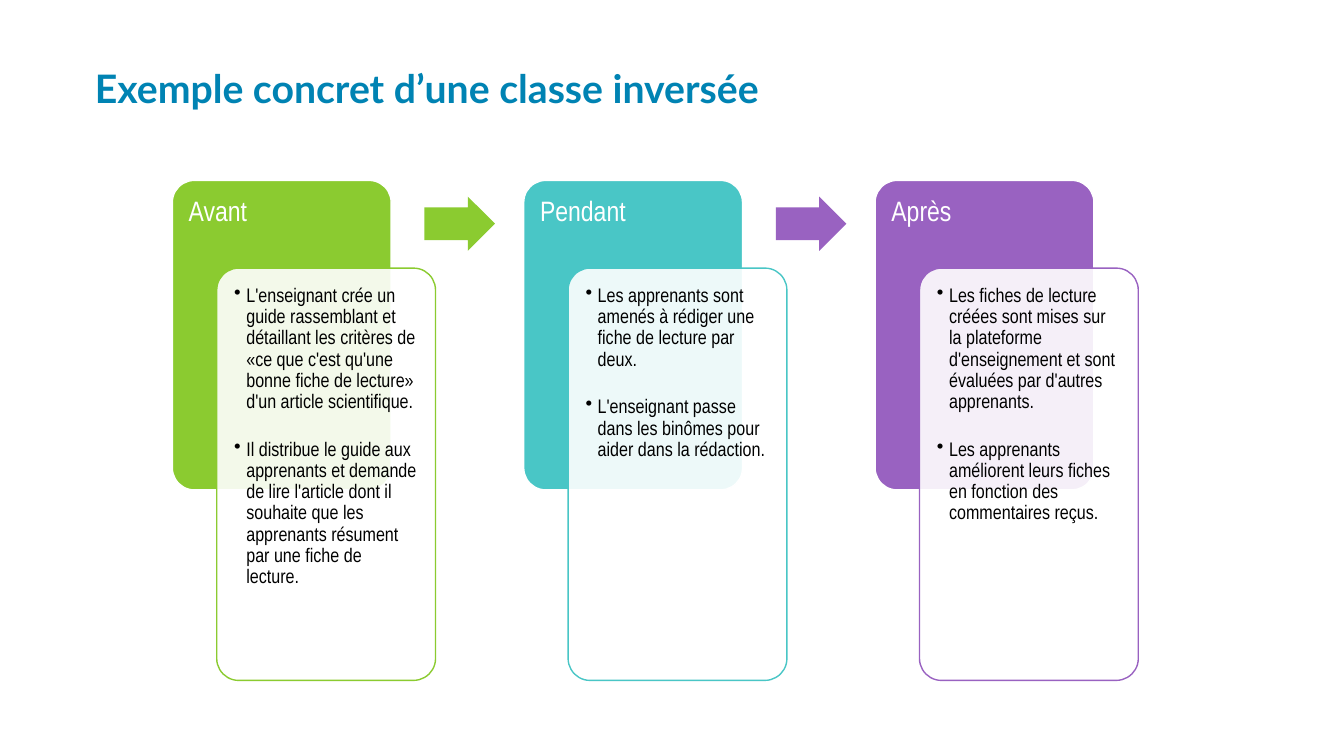
from lxml.etree import SubElement
from pptx import Presentation
from pptx.dml.color import RGBColor
from pptx.enum.shapes import MSO_SHAPE
from pptx.enum.text import MSO_ANCHOR, MSO_AUTO_SIZE, PP_ALIGN
from pptx.oxml.ns import qn
from pptx.util import Inches, Pt

BLUE = RGBColor(0x00, 0x83, 0xB3)
GREEN = RGBColor(0x8B, 0xCB, 0x30)
TEAL = RGBColor(0x49, 0xC6, 0xC6)
PURPLE = RGBColor(0x99, 0x62, 0xC1)
WHITE = RGBColor(0xFF, 0xFF, 0xFF)
BLACK = RGBColor(0x00, 0x00, 0x00)

FIRST_LEFT, TOP = 1.71, 1.79
COLUMN_PITCH = 6.97 / 2
BLOCK_WIDTH = 2.17

PHASES = [
    ("Avant", GREEN, [
        "L'enseignant crée un guide rassemblant et détaillant les critères de "
        "«ce que c'est qu'une bonne fiche de lecture» d'un article scientifique.",
        "Il distribue le guide aux apprenants et demande de lire l'article dont il "
        "souhaite que les apprenants résument par une fiche de lecture."]),
    ("Pendant", TEAL, [
        "Les apprenants sont amenés à rédiger une fiche de lecture par deux.",
        "L'enseignant passe dans les binômes pour aider dans la rédaction."]),
    ("Après", PURPLE, [
        "Les fiches de lecture créées sont mises sur la plateforme d'enseignement "
        "et sont évaluées par d'autres apprenants.",
        "Les apprenants améliorent leurs fiches en fonction des commentaires reçus."]),
]


def set_format(target, values):
    for name, value in values.items():
        setattr(target, name, value)


def write(para, text, size, color, font="Arial Narrow", bold=False, spacing=0.9):
    span = para.add_run()
    span.text = text
    set_format(para, {"alignment": PP_ALIGN.LEFT, "line_spacing": spacing})
    set_format(span.font, {"name": font, "size": Pt(size), "bold": bold})
    span.font.color.rgb = color


def add_bullet(para):
    properties = para._p.get_or_add_pPr()
    properties.set("marL", str(Inches(0.12)))
    properties.set("indent", str(-Inches(0.12)))
    SubElement(properties, qn("a:buChar")).set("char", "•")


def add_block(page, kind, box, fill, line=None):
    shape = page.shapes.add_shape(kind, *[Inches(length) for length in box])
    shape.shadow.inherit = False
    shape.fill.solid()
    shape.fill.fore_color.rgb = fill
    if line is None:
        shape.line.fill.background()
    else:
        shape.line.color.rgb = line
        shape.line.width = Pt(1)
    return shape


def add_rounded(page, box, fill, line, inset):
    shape = add_block(page, MSO_SHAPE.ROUNDED_RECTANGLE, box, fill, line)
    shape.adjustments[0] = 0.1
    margins = {f"margin_{side}": Inches(inset)
               for side in ("left", "top", "right", "bottom")}
    set_format(shape.text_frame,
               {"word_wrap": True, "vertical_anchor": MSO_ANCHOR.TOP, **margins})
    return shape


def add_title(page, left, top, width, height):
    title = page.shapes.title
    set_format(title, {"left": Inches(left), "top": Inches(top),
                       "width": Inches(width), "height": Inches(height)})
    set_format(title.text_frame, {"vertical_anchor": MSO_ANCHOR.BOTTOM,
                                  "auto_size": MSO_AUTO_SIZE.NONE,
                                  "word_wrap": True})
    write(title.text_frame.paragraphs[0], "Exemple concret d’une classe inversée",
          28, BLUE, font="Lato", bold=True, spacing=0.8)


def add_phase(page, left, top, name, color, steps):
    # Coloured panel with the phase name
    panel = add_rounded(page, (left, top, BLOCK_WIDTH, 3.07), color, WHITE, 0.1)
    write(panel.text_frame.paragraphs[0], name, 20, WHITE)

    # Translucent card with the steps
    card = add_rounded(page, (left + 0.44, top + 0.87, BLOCK_WIDTH, 4.09),
                       WHITE, color, 0.11)
    white_fill = card._element.spPr.find(qn("a:solidFill"))
    SubElement(white_fill[0], qn("a:alpha")).set("val", "90000")
    frame = card.text_frame
    for index, step in enumerate(steps):
        para = frame.add_paragraph() if index else frame.paragraphs[0]
        add_bullet(para)
        write(para, step, 14, BLACK)
        if index:
            para.space_before = Pt(19)


def add_arrow(page, left, top, color):
    arrow = add_block(page, MSO_SHAPE.RIGHT_ARROW, (left, top, 0.7, 0.54), color)
    arrow.adjustments[0] = 0.6
    arrow.adjustments[1] = 0.5


def main():
    deck = Presentation()
    deck.slide_width, deck.slide_height = Inches(13.33), Inches(7.5)
    page = deck.slides.add_slide(deck.slide_layouts[5])
    add_title(page, 0.84, 0.58, 11.58, 0.57)

    # Three phases, each followed by an arrow except the last
    arrow_colors = [GREEN, PURPLE]
    for index, (name, color, steps) in enumerate(PHASES):
        left = FIRST_LEFT + index * COLUMN_PITCH
        add_phase(page, left, TOP, name, color, steps)
        if index < len(arrow_colors):
            add_arrow(page, left + 2.5, TOP + 0.16, arrow_colors[index])
    deck.save("out.pptx")


if __name__ == "__main__":
    main()
